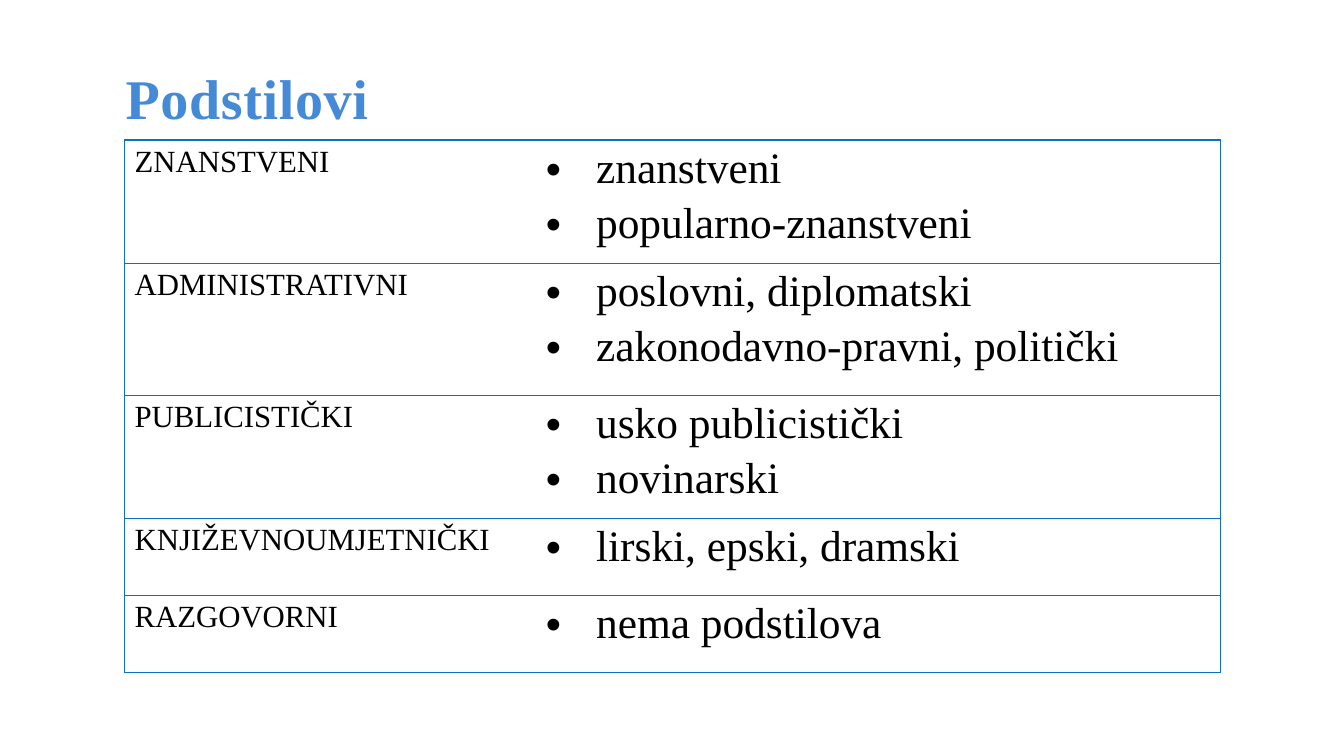
from lxml import etree
from pptx import Presentation
from pptx.dml.color import RGBColor
from pptx.enum.text import MSO_ANCHOR, MSO_AUTO_SIZE, PP_ALIGN
from pptx.oxml import parse_xml
from pptx.oxml.ns import nsdecls, qn
from pptx.util import Cm, Pt

MIDDLE = MSO_ANCHOR.MIDDLE
NO_AUTOFIT = MSO_AUTO_SIZE.NONE
CENTER = PP_ALIGN.CENTER

COLORS = {"title": "448AD7", "line": "0F6FC6", "shadow": "9FC9F0",
          "text": "000000", "cell": "FFFFFF"}
FONT = "Times New Roman"
ROWS = [
    ("ZNANSTVENI", ["znanstveni", "popularno-znanstveni"], 3.1),
    ("ADMINISTRATIVNI", ["poslovni, diplomatski", "zakonodavno-pravni, politički"], 3.33),
    ("PUBLICISTIČKI", ["usko publicistički", "novinarski"], 3.1),
    ("KNJIŽEVNOUMJETNIČKI", ["lirski, epski, dramski"], 1.94),
    ("RAZGOVORNI", ["nema podstilova"], 1.94),
]
COLUMN_WIDTHS = [10.36, 17.25]


def style_font(font, color, **values):
    font.color.rgb = RGBColor.from_string(COLORS[color])
    for name, value in {"name": FONT, **values}.items():
        setattr(font, name, value)


def fill_cell(cell, lines, size, visible_edges, bulleted):
    """Write the lines into the cell and draw only the named edges."""
    cell.fill.solid()
    cell.fill.fore_color.rgb = RGBColor.from_string(COLORS["cell"])
    properties = cell._tc.get_or_add_tcPr()
    for position, edge in enumerate("LRTB"):
        paint = "<a:noFill/>"
        if edge in visible_edges:
            paint = f'<a:solidFill><a:srgbClr val="{COLORS["line"]}"/></a:solidFill>'
        properties.insert(position, parse_xml(
            f'<a:ln{edge} {nsdecls("a")} w="{Pt(1)}">{paint}</a:ln{edge}>'))
    frame = cell.text_frame
    for index, line in enumerate(lines):
        para = frame.add_paragraph() if index else frame.paragraphs[0]
        if index:
            para.space_before = Pt(5)
        if bulleted:
            settings = para._p.get_or_add_pPr()
            settings.set("marL", str(Cm(1.27)))
            settings.set("indent", str(-Cm(1.27)))
            etree.SubElement(settings, qn("a:buFont"), typeface="Arial")
            etree.SubElement(settings, qn("a:buChar"), char="•")
        span = para.add_run()
        span.text = line
        style_font(span.font, "text", size=size)


deck = Presentation()
deck.slide_width, deck.slide_height = Cm(33.87), Cm(19.05)
page = deck.slides.add_slide(deck.slide_layouts[5])

title = page.shapes.title
title.left, title.top, title.width, title.height = Cm(1.93), Cm(1.73), Cm(8.59), Cm(1.42)
frame = title.text_frame
for name, value in {"auto_size": NO_AUTOFIT, "vertical_anchor": MIDDLE, "word_wrap": True,
                    "margin_top": 0, "margin_bottom": 0}.items():
    setattr(frame, name, value)
para = frame.paragraphs[0]
para.alignment = CENTER
span = para.add_run()
span.text = "Podstilovi"
style_font(span.font, "title", size=Pt(40), bold=True)

# Outline goes before the text fill, shadow right after it
letters = span._r.get_or_add_rPr()
letters.set("spc", "50")
letters.insert(0, parse_xml(
    f'<a:ln {nsdecls("a")} w="{Pt(0.75)}"><a:solidFill>'
    f'<a:srgbClr val="{COLORS["line"]}"/></a:solidFill></a:ln>'))
letters.insert(2, parse_xml(
    f'<a:effectLst {nsdecls("a")}><a:outerShdw dist="{Pt(1)}" dir="2700000">'
    f'<a:srgbClr val="{COLORS["shadow"]}"/></a:outerShdw></a:effectLst>'))

table = page.shapes.add_table(len(ROWS), 2, Cm(3.14), Cm(3.53), Cm(sum(COLUMN_WIDTHS)),
                              Cm(sum(height for *_, height in ROWS))).table
table.first_row = False
table.horz_banding = False
for column, width in zip(table.columns, COLUMN_WIDTHS):
    column.width = Cm(width)
for index, (style, substyles, height) in enumerate(ROWS):
    table.rows[index].height = Cm(height)
    fill_cell(table.cell(index, 0), [style], Pt(22), "LTB", bulleted=False)
    fill_cell(table.cell(index, 1), substyles, Pt(31), "RTB", bulleted=True)

deck.save("out.pptx")
